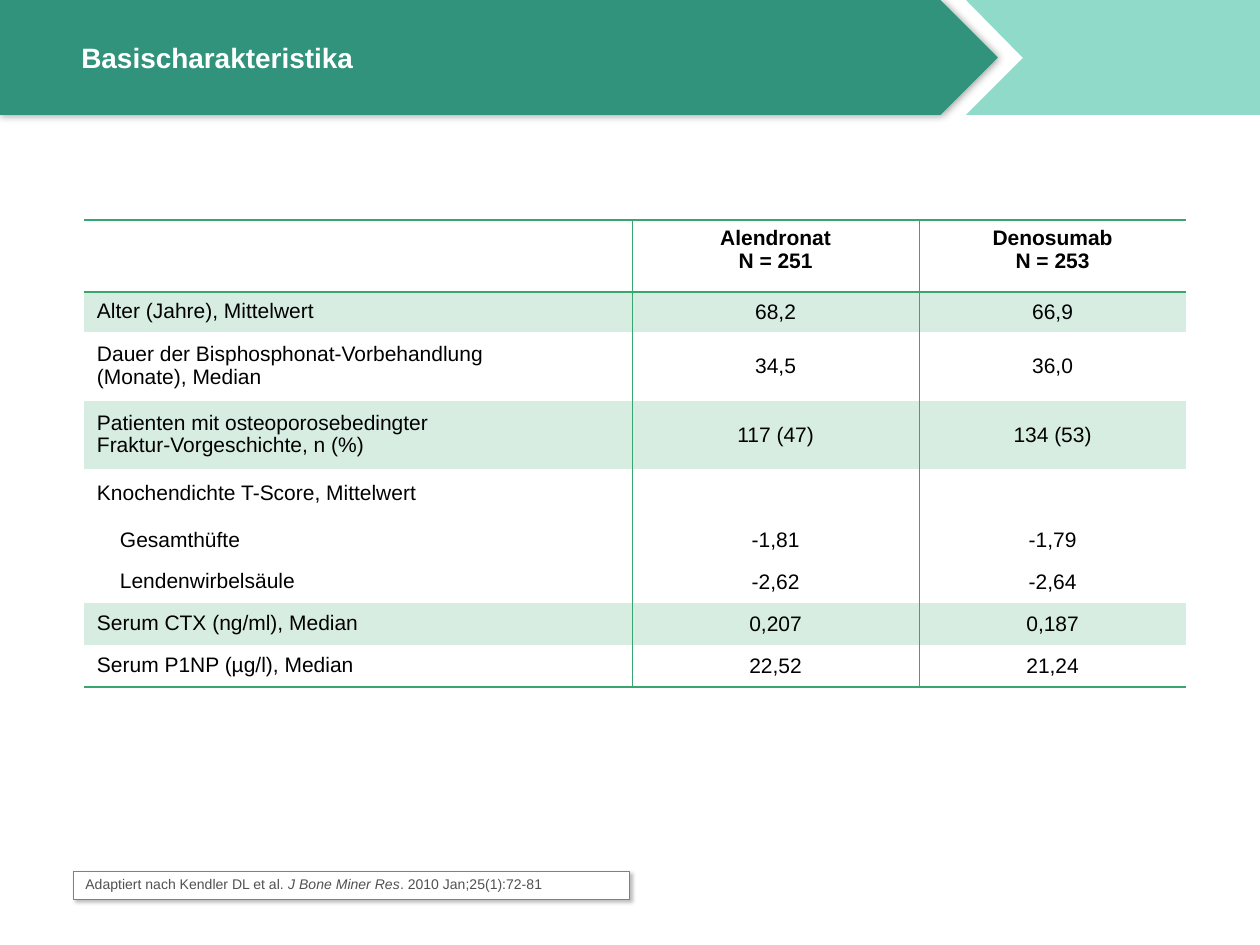
from lxml.etree import SubElement
from pptx import Presentation
from pptx.dml.color import RGBColor
from pptx.enum.shapes import MSO_SHAPE
from pptx.enum.text import MSO_ANCHOR, PP_ALIGN
from pptx.oxml import parse_xml
from pptx.oxml.ns import nsdecls, qn
from pptx.util import Pt

PX = 7257
GREEN = "37A76F"


def hue(code):
    return RGBColor.from_string(code)


def put(frame, text, size=12, color="000000", bold=False, align=PP_ALIGN.LEFT,
        anchor=MSO_ANCHOR.MIDDLE, space=1.0):
    frame.word_wrap = True
    frame.vertical_anchor = anchor
    for row, line in enumerate(text.split("\n")):
        para = frame.paragraphs[0] if row == 0 else frame.add_paragraph()
        para.alignment = align
        para.line_spacing = space
        for part, words in enumerate(line.split("*")):
            run = para.add_run()
            run.text = words
            font = run.font
            font.name = "Arial"
            font.size = Pt(size)
            font.bold = bold
            font.italic = part % 2 == 1
            font.color.rgb = hue(color)


deck = Presentation()
deck.slide_width = 1260 * PX
deck.slide_height = 945 * PX
slide = deck.slides.add_slide(deck.slide_layouts[6])
shapes = slide.shapes

pen = shapes.build_freeform(966, 0, scale=PX)
pen.add_line_segments([(1260, 0), (1260, 115), (966, 115), (1023, 58)], close=True)
tail = pen.convert_to_shape()
tail.shadow.inherit = False
tail.fill.solid()
tail.fill.fore_color.rgb = hue("8FDAC8")
tail.line.fill.background()

banner = shapes.add_shape(MSO_SHAPE.PENTAGON, 0, 0, 998 * PX, 115 * PX)
banner.line.fill.background()
source = shapes.add_shape(MSO_SHAPE.RECTANGLE, 73 * PX, 871 * PX, 556 * PX, 28 * PX)
source.line.color.rgb = hue("808080")
source.line.width = Pt(0.25)
for shape, fill, alpha, blur, dist, angle in (
    (banner, "31937B", 40, 5, 0, 0),
    (source, "FFFFFF", 25, 2, 2, 45),
):
    shape.fill.solid()
    shape.fill.fore_color.rgb = hue(fill)
    shape.shadow.inherit = False
    effects = shape._element.spPr.find(qn("a:effectLst"))
    shade = SubElement(effects, qn("a:outerShdw"), blurRad=str(Pt(blur)),
                       dist=str(Pt(dist)), dir=str(angle * 60000), rotWithShape="0")
    black = SubElement(shade, qn("a:srgbClr"), val="000000")
    SubElement(black, qn("a:alpha"), val=str(alpha * 1000))
put(source.text_frame, "Adaptiert nach Kendler DL et al. *J Bone Miner Res*. 2010 Jan;25(1):72-81",
    size=8, color="515151", space=0.9)

title = shapes.add_textbox(69 * PX, 15 * PX, 844 * PX, 84 * PX)
put(title.text_frame, "Basischarakteristika", size=16, color="FFFFFF", bold=True)

rows = [
    (72, "", "Alendronat\nN = 251", "Denosumab\nN = 253"),
    (40, "Alter (Jahre), Mittelwert", "68,2", "66,9"),
    (69, "Dauer der Bisphosphonat-Vorbehandlung\n(Monate), Median", "34,5", "36,0"),
    (68, "Patienten mit osteoporosebedingter\nFraktur-Vorgeschichte, n (%)",
     "117 (47)", "134 (53)"),
    (49, "Knochendichte T-Score, Mittelwert", "", ""),
    (42, "Gesamthüfte", "-1,81", "-1,79"),
    (42, "Lendenwirbelsäule", "-2,62", "-2,64"),
    (42, "Serum CTX (ng/ml), Median", "0,207", "0,187"),
    (42, "Serum P1NP (µg/l), Median", "22,52", "21,24"),
]
tinted = (1, 3, 7)
nested = (5, 6)
last = len(rows) - 1
table = shapes.add_table(len(rows), 3, 84 * PX, 220 * PX, 1102 * PX, 466 * PX).table
table.first_row = False
table.horz_banding = False
for col, width in enumerate((548, 287, 267)):
    table.columns[col].width = width * PX

for row, (height, *texts) in enumerate(rows):
    table.rows[row].height = height * PX
    for col, text in enumerate(texts):
        cell = table.cell(row, col)
        cell.margin_left = (36 if row in nested and col == 0 else 13) * PX
        put(cell.text_frame, text, bold=row == 0,
            align=PP_ALIGN.CENTER if col else PP_ALIGN.LEFT,
            space=0.95 if row and col == 0 else 1.0)
        cell.vertical_anchor = MSO_ANCHOR.MIDDLE if row else MSO_ANCHOR.TOP
        cell.fill.solid()
        cell.fill.fore_color.rgb = hue("D7EDE2" if row in tinted else "FFFFFF")
        edges = {
            "L": 0.5 if col > 0 else 0,
            "R": 0.5 if col < 2 else 0,
            "T": 1 if row < 2 else 0,
            "B": 1 if row in (0, last) else 0,
        }
        props = cell._tc.get_or_add_tcPr()
        for spot, (side, weight) in enumerate(edges.items()):
            paint = (f'<a:solidFill><a:srgbClr val="{GREEN}"/></a:solidFill>'
                     if weight else "<a:noFill/>")
            props.insert(spot, parse_xml(
                f'<a:ln{side} {nsdecls("a")} w="{Pt(weight)}">{paint}</a:ln{side}>'))

deck.save("out.pptx")
